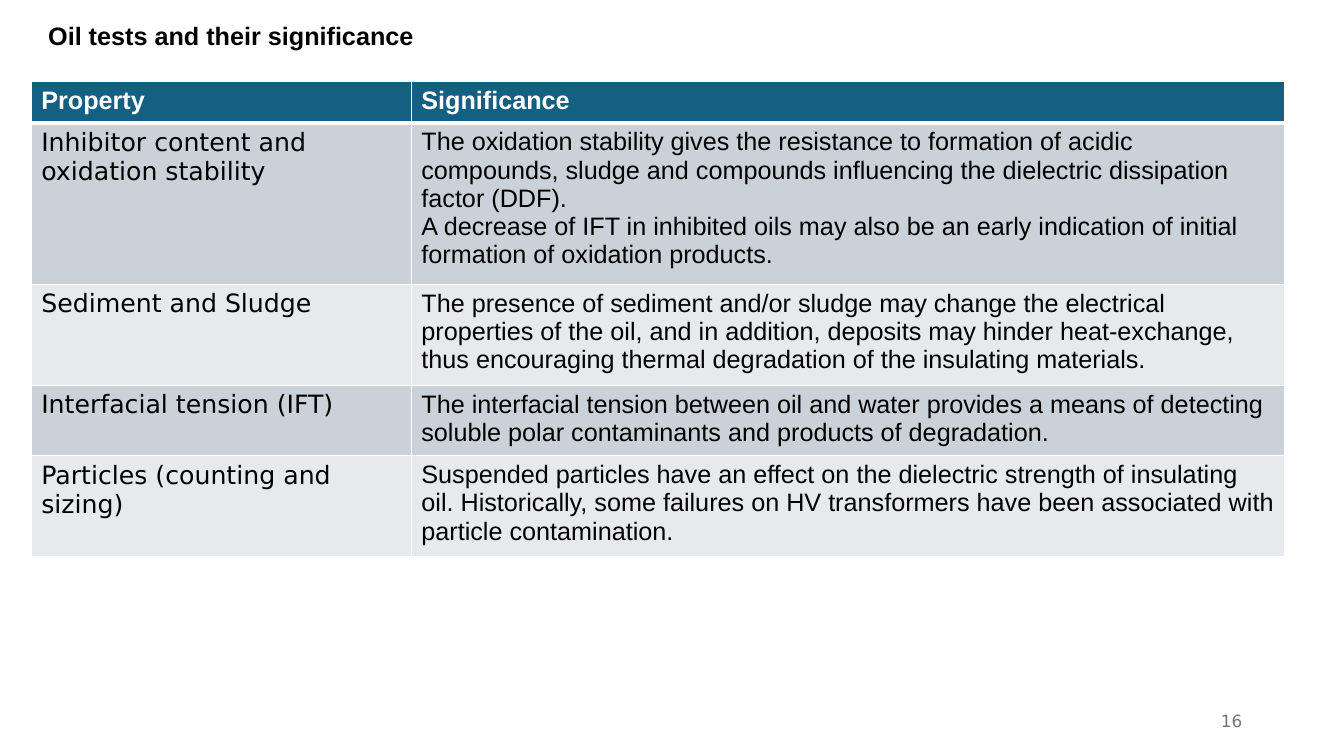
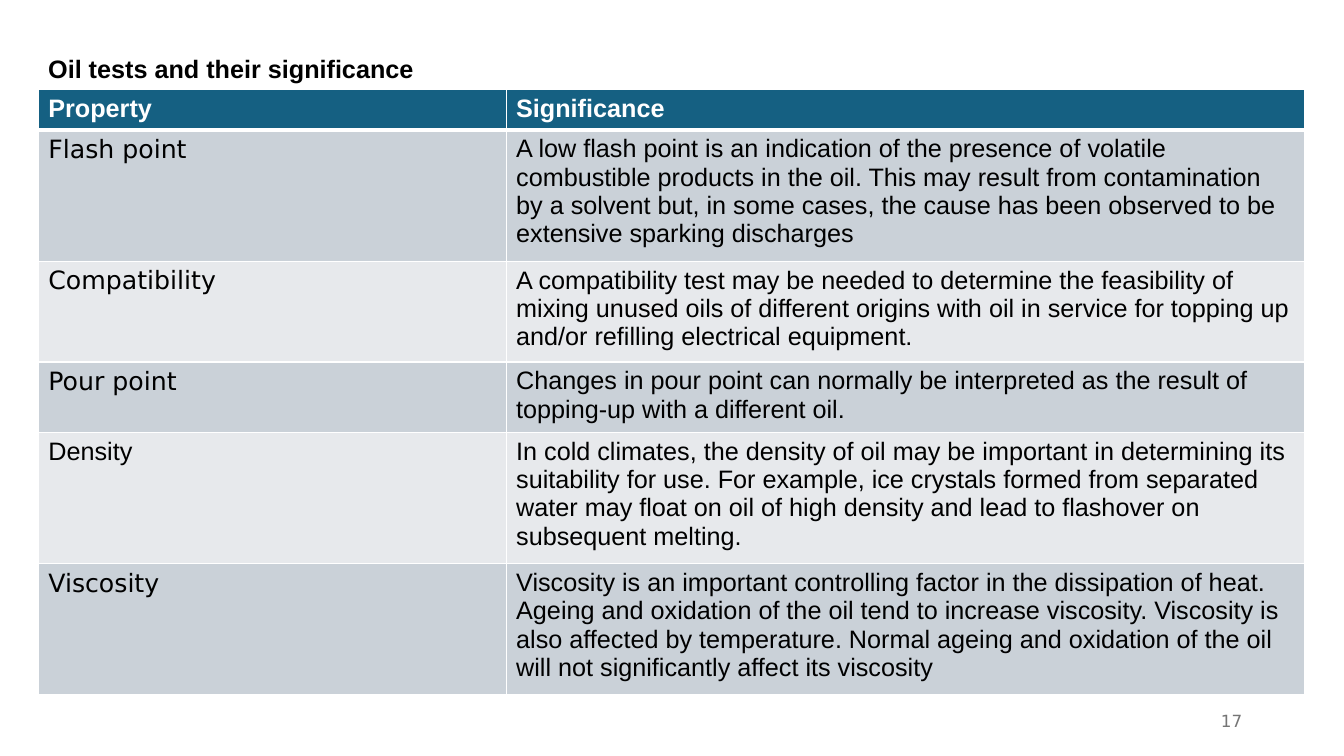
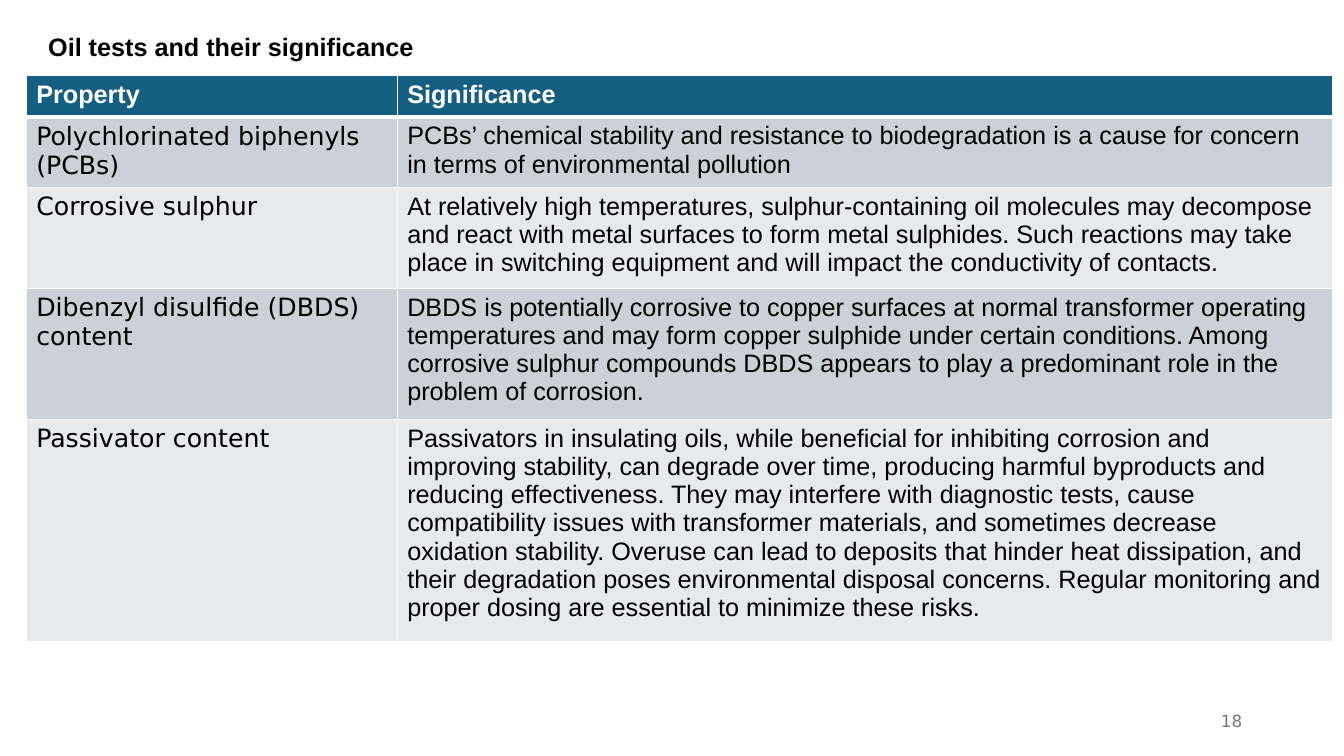
import pptx
import pptx.dml.color
import pptx.enum.text
import pptx.oxml
import pptx.oxml.ns
import pptx.util
from pptx.util import Inches

HEADING = "Oil tests and their significance"
COLUMN_HEADS = ("Property", "Significance")
SANS, ARIAL = "DejaVu Sans", "Arial"
WHITE, BLACK, GREY, TEAL = "FFFFFF", "000000", "757575", "156082"
BANDS = ("CAD1D8", "E7E9EC")
FIRST_PAGE = 16

SLIDES = [
    {
        "title_top": 0.15,
        "table_at": (0.31, 0.81),
        "columns": (3.77, 8.66),
        "rows": (0.41, 1.5, 0.94, 0.66, 0.93),
        "tests": [
            ("Inhibitor content and oxidation stability",
             "The oxidation stability gives the resistance to formation of acidic compounds, sludge and "
             "compounds influencing the dielectric dissipation factor (DDF).\n"
             "A decrease of IFT in inhibited oils may also be an early indication of initial formation "
             "of oxidation products."),
            ("Sediment and Sludge",
             "The presence of sediment and/or sludge may change the electrical properties of the oil, and "
             "in addition, deposits may hinder heat-exchange, thus encouraging thermal degradation of the "
             "insulating materials."),
            ("Interfacial tension (IFT)",
             "The interfacial tension between oil and water provides a means of detecting soluble polar "
             "contaminants and products of degradation."),
            ("Particles (counting and sizing)",
             "Suspended particles have an effect on the dielectric strength of insulating oil. "
             "Historically, some failures on HV transformers have been associated with particle "
             "contamination."),
        ],
    },
    {
        "title_top": 0.48,
        "table_at": (0.38, 0.89),
        "columns": (4.64, 7.92),
        "rows": (0.4, 1.3, 1.0, 0.7, 1.3, 1.3),
        "arial_properties": ("Density",),
        "tests": [
            ("Flash point",
             "A low flash point is an indication of the presence of volatile combustible products in the "
             "oil. This may result from contamination by a solvent but, in some cases, the cause has been "
             "observed to be extensive sparking discharges"),
            ("Compatibility",
             "A compatibility test may be needed to determine the feasibility of mixing unused oils of "
             "different origins with oil in service for topping up and/or refilling electrical equipment."),
            ("Pour point",
             "Changes in pour point can normally be interpreted as the result of topping-up with a "
             "different oil."),
            ("Density",
             "In cold climates, the density of oil may be important in determining its suitability for "
             "use. For example, ice crystals formed from separated water may float on oil of high density "
             "and lead to flashover on subsequent melting."),
            ("Viscosity",
             "Viscosity is an important controlling factor in the dissipation of heat. Ageing and "
             "oxidation of the oil tend to increase viscosity. Viscosity is also affected by temperature. "
             "Normal ageing and oxidation of the oil will not significantly affect its viscosity"),
        ],
    },
    {
        "title_top": 0.26,
        "table_at": (0.26, 0.75),
        "columns": (3.68, 9.28),
        "rows": (0.41, 0.67, 0.94, 1.22, 2.05),
        "tests": [
            ("Polychlorinated biphenyls (PCBs)",
             "PCBs’ chemical stability and resistance to biodegradation is a cause for concern in terms "
             "of environmental pollution"),
            ("Corrosive sulphur",
             "At relatively high temperatures, sulphur-containing oil molecules may decompose and react "
             "with metal surfaces to form metal sulphides. Such reactions may take place in switching "
             "equipment and will impact the conductivity of contacts."),
            ("Dibenzyl disulfide (DBDS) content",
             "DBDS is potentially corrosive to copper surfaces at normal transformer operating "
             "temperatures and may form copper sulphide under certain conditions. Among corrosive sulphur "
             "compounds DBDS appears to play a predominant role in the problem of corrosion."),
            ("Passivator content",
             "Passivators in insulating oils, while beneficial for inhibiting corrosion and improving "
             "stability, can degrade over time, producing harmful byproducts and reducing effectiveness. "
             "They may interfere with diagnostic tests, cause compatibility issues with transformer "
             "materials, and sometimes decrease oxidation stability. Overuse can lead to deposits that "
             "hinder heat dissipation, and their degradation poses environmental disposal concerns. "
             "Regular monitoring and proper dosing are essential to minimize these risks."),
        ],
    },
]


def color(value):
    return pptx.dml.color.RGBColor.from_string(value)


def write(frame, text, size=18, font=ARIAL, fill=BLACK, bold=False, align=None):
    frame.word_wrap = True
    for index, line in enumerate(text.split("\n")):
        paragraph = frame.add_paragraph() if index else frame.paragraphs[0]
        paragraph.alignment = align
        run = paragraph.add_run()
        run.text = line
        run.font.size = pptx.util.Pt(size)
        run.font.name = font
        run.font.bold = bold
        run.font.color.rgb = color(fill)


def add_label(slide, box, text, anchor=pptx.enum.text.MSO_ANCHOR.TOP, **style):
    label = slide.shapes.add_textbox(*map(Inches, box))
    label.text_frame.vertical_anchor = anchor
    write(label.text_frame, text, **style)


def set_borders(cell, **widths):
    properties = cell._tc.get_or_add_tcPr()
    for side in "LRTB":
        width = pptx.util.Pt(widths.get(side, 1))
        properties.append(pptx.oxml.parse_xml(
            f'<a:ln{side} {pptx.oxml.ns.nsdecls("a")} w="{width}">'
            f'<a:solidFill><a:srgbClr val="{WHITE}"/></a:solidFill></a:ln{side}>'))


def style_cell(cell, text, band, borders, **style):
    set_borders(cell, **borders)
    cell.fill.solid()
    cell.fill.fore_color.rgb = color(band)
    write(cell.text_frame, text, **style)


def add_tests_table(slide, at, columns, rows, tests, arial_properties=()):
    box = (*at, sum(columns), sum(rows))
    table = slide.shapes.add_table(len(rows), len(columns), *map(Inches, box)).table
    table.horz_banding = False
    for column, width in zip(table.columns, columns):
        column.width = Inches(width)
    for row, height in zip(table.rows, rows):
        row.height = Inches(height)
    for cell, head in zip(table.rows[0].cells, COLUMN_HEADS):
        style_cell(cell, head, TEAL, {"B": 3}, fill=WHITE, bold=True)
    for number, (name, significance) in enumerate(tests, start=1):
        band = BANDS[(number - 1) % 2]
        borders = {"T": 3} if number == 1 else {}
        name_font = ARIAL if name in arial_properties else SANS
        style_cell(table.cell(number, 0), name, band, borders, font=name_font)
        style_cell(table.cell(number, 1), significance, band, borders)


def add_tests_slide(deck, page, title_top, table_at, columns, rows, tests, arial_properties=()):
    slide = deck.slides.add_slide(deck.slide_layouts[6])
    add_label(slide, (9.42, 6.95, 3, 0.4), str(page), anchor=pptx.enum.text.MSO_ANCHOR.MIDDLE,
              size=12, font=SANS, fill=GREY, align=pptx.enum.text.PP_ALIGN.RIGHT)
    add_label(slide, (0.38, title_top, 12.27, 0.4), HEADING, bold=True)
    add_tests_table(slide, table_at, columns, rows, tests, arial_properties)


def main():
    deck = pptx.Presentation()
    deck.slide_width, deck.slide_height = Inches(13.33), Inches(7.5)
    for page, content in enumerate(SLIDES, start=FIRST_PAGE):
        add_tests_slide(deck, page, **content)
    deck.save("out.pptx")


if __name__ == "__main__":
    main()
